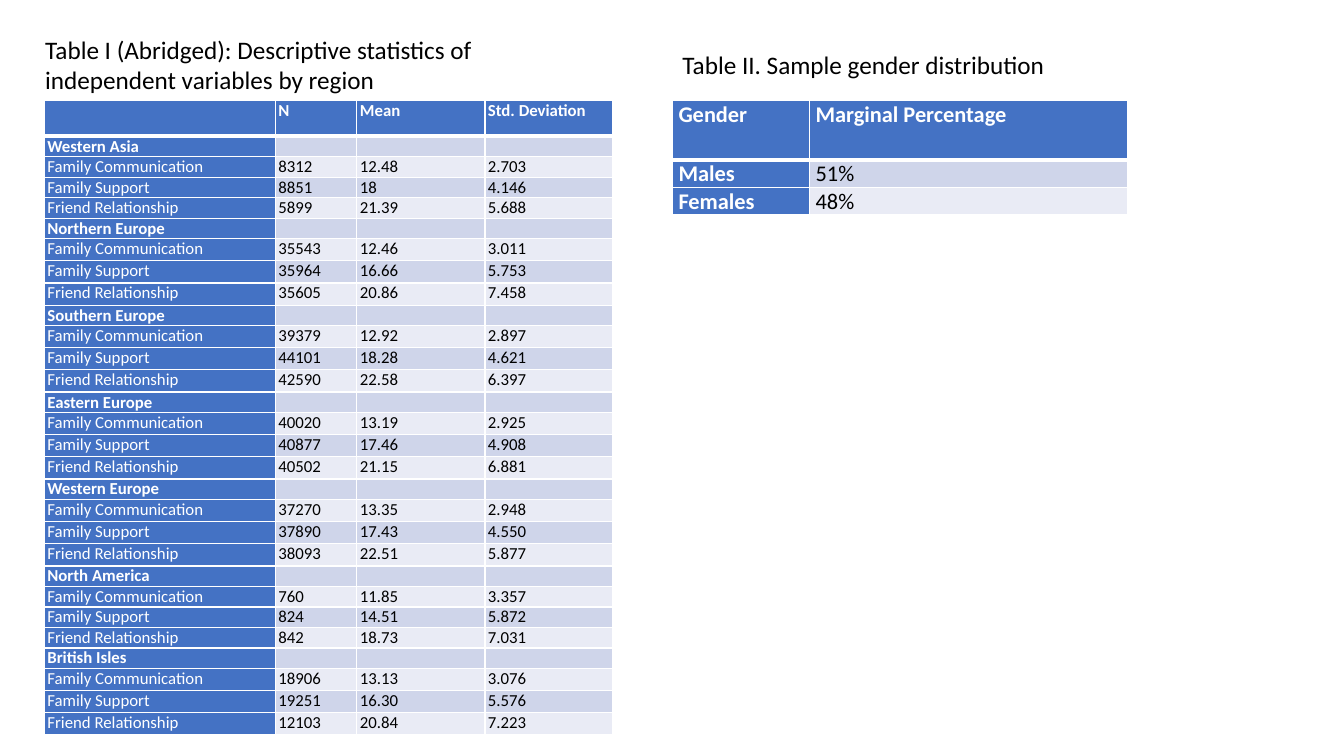
from lxml import etree
from pptx import Presentation
from pptx.dml.color import RGBColor
from pptx.enum.text import MSO_AUTO_SIZE
from pptx.oxml.ns import qn
from pptx.util import Inches, Pt

BLUE, BAND_DARK, BAND_LIGHT = "4472C4", "CFD5EA", "E9EBF5"
WHITE, BLACK = "FFFFFF", "000000"
MEASURES = ["Family Communication", "Family Support", "Friend Relationship"]
TIGHT, LOOSE = 0.18, 0.22
REGIONS = [
    ("Western Asia", TIGHT, [("8312", "12.48", "2.703"), ("8851", "18", "4.146"),
                             ("5899", "21.39", "5.688")]),
    ("Northern Europe", LOOSE, [("35543", "12.46", "3.011"), ("35964", "16.66", "5.753"),
                                ("35605", "20.86", "7.458")]),
    ("Southern Europe", LOOSE, [("39379", "12.92", "2.897"), ("44101", "18.28", "4.621"),
                                ("42590", "22.58", "6.397")]),
    ("Eastern Europe", LOOSE, [("40020", "13.19", "2.925"), ("40877", "17.46", "4.908"),
                               ("40502", "21.15", "6.881")]),
    ("Western Europe", LOOSE, [("37270", "13.35", "2.948"), ("37890", "17.43", "4.550"),
                               ("38093", "22.51", "5.877")]),
    ("North America", TIGHT, [("760", "11.85", "3.357"), ("824", "14.51", "5.872"),
                              ("842", "18.73", "7.031")]),
    ("British Isles", LOOSE, [("18906", "13.13", "3.076"), ("19251", "16.30", "5.576"),
                              ("12103", "20.84", "7.223")]),
]


def rgb(value):
    return RGBColor.from_string(value)


def write(frame, text, size=18, color=BLACK, bold=False):
    paragraph = frame.paragraphs[0]
    if not text:
        etree.SubElement(paragraph._p, qn("a:endParaRPr"), sz=str(size * 100))
        return
    run = paragraph.add_run()
    run.text = text
    run.font.name = "Calibri"
    run.font.size = Pt(size)
    run.font.bold = bold
    run.font.color.rgb = rgb(color)


def add_caption(slide, text, left, top, width, height, wrap=True):
    caption = slide.shapes.add_textbox(Inches(left), Inches(top), Inches(width), Inches(height))
    caption.text_frame.word_wrap = wrap
    caption.text_frame.auto_size = MSO_AUTO_SIZE.SHAPE_TO_FIT_TEXT
    write(caption.text_frame, text)


def set_borders(cell, top=1, bottom=1):
    properties = cell._tc.get_or_add_tcPr()
    widths = {"lnL": 1, "lnR": 1, "lnT": top, "lnB": bottom}
    for position, (side, width) in enumerate(widths.items()):
        line = etree.Element(qn(f"a:{side}"), w=str(Pt(width)))
        fill = etree.SubElement(line, qn("a:solidFill"))
        etree.SubElement(fill, qn("a:srgbClr"), val=WHITE)
        properties.insert(position, line)


def add_grid(slide, rows, left, top, widths, heights, size, margin, is_bold):
    grid = slide.shapes.add_table(len(rows), len(widths), Inches(left), Inches(top),
                                  Inches(sum(widths)), Inches(sum(heights))).table
    grid.first_col = True
    for column, width in zip(grid.columns, widths):
        column.width = Inches(width)
    for r, (values, height) in enumerate(zip(rows, heights)):
        grid.rows[r].height = Inches(height)
        for c, value in enumerate(values):
            cell = grid.cell(r, c)
            heading = r == 0 or c == 0
            cell.margin_left = cell.margin_right = Inches(margin)
            cell.margin_top = cell.margin_bottom = 0
            cell.fill.solid()
            band = BAND_DARK if r % 2 else BAND_LIGHT
            cell.fill.fore_color.rgb = rgb(BLUE if heading else band)
            set_borders(cell, top=3 if r == 1 else 1, bottom=3 if r == 0 else 1)
            write(cell.text_frame, value, size=size, color=WHITE if heading else BLACK,
                  bold=heading and is_bold(value))


def add_region_statistics(slide):
    rows, heights = [("", "N", "Mean", "Std. Deviation")], [0.35]
    for region, height, statistics in REGIONS:
        rows.append((region, "", "", ""))
        rows += [(measure, *values) for measure, values in zip(MEASURES, statistics)]
        heights += [TIGHT] + [height] * len(MEASURES)
    add_grid(slide, rows, 0.44, 1, [2.29, 0.81, 1.27, 1.27], heights, size=12, margin=0.03,
             is_bold=lambda label: label not in MEASURES)


def add_gender_distribution(slide):
    rows = [("Gender", "Marginal Percentage"), ("Males", "51%"), ("Females", "48%")]
    add_grid(slide, rows, 6.67, 1, [1.36, 3.15], [0.59, 0.21, 0.21], size=16, margin=0.06,
             is_bold=lambda label: True)


def main():
    presentation = Presentation()
    presentation.slide_width = Inches(13.33)
    presentation.slide_height = Inches(7.5)
    slide = presentation.slides.add_slide(presentation.slide_layouts[6])
    add_region_statistics(slide)
    add_gender_distribution(slide)
    add_caption(slide, "Table I (Abridged): Descriptive statistics of independent variables by region",
                0.35, 0.29, 5.73, 0.71)
    add_caption(slide, "Table II. Sample gender distribution", 6.67, 0.44, 3.89, 0.4, wrap=False)
    presentation.save("out.pptx")


if __name__ == "__main__":
    main()
